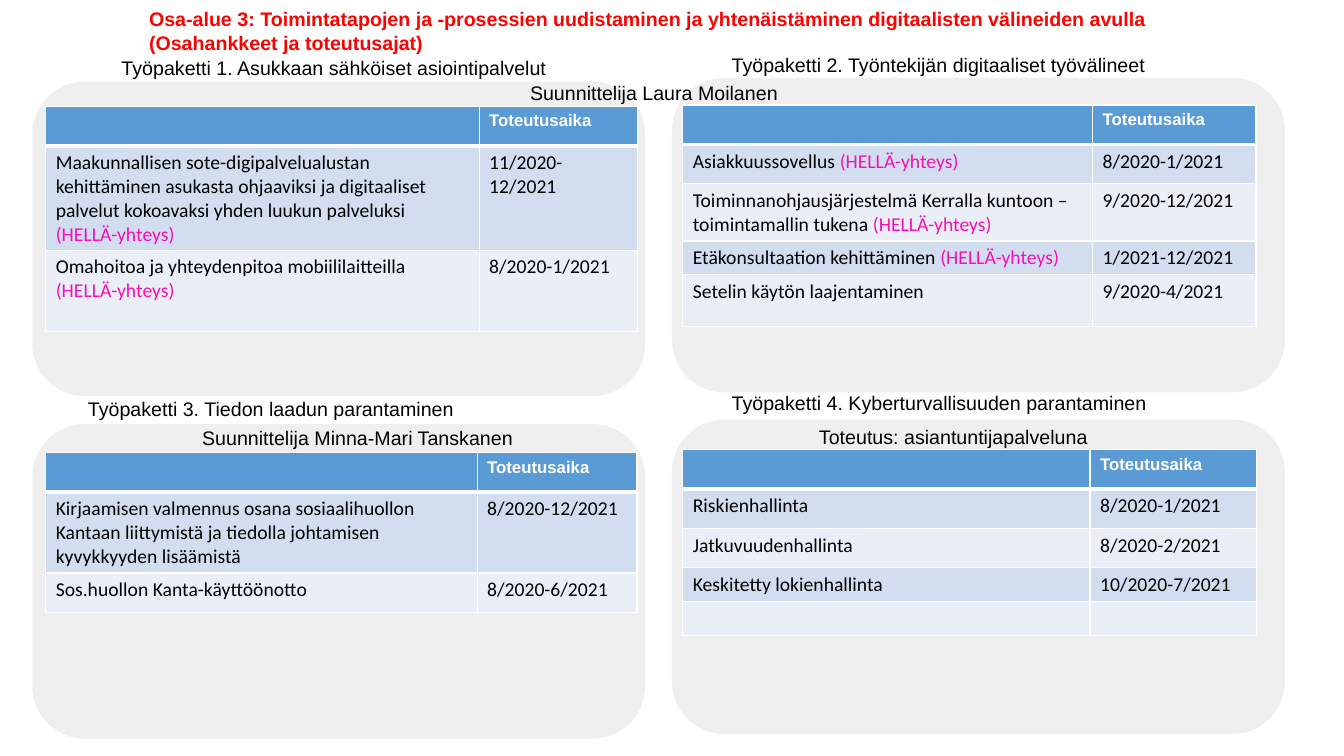
import pptx
import pptx.dml.color
import pptx.enum.shapes
import pptx.oxml
import pptx.oxml.ns
import pptx.util
from lxml import etree

LINK = "(HELLÄ-yhteys)"


def rgb(value):
    return pptx.dml.color.RGBColor.from_string(value)


class Board:
    """Style and current slide; all lengths are percentages of the slide's size."""
    heading_font, body_font = "Arial", "Calibri"
    black, white, red, pink = "000000", "FFFFFF", "FF0000", "F60EB9"
    panel_fill, header_fill = "EFEFEF", "5B9BD5"
    bands = ("D2DEEF", "EAEFF7")

    def __init__(self, prs):
        self.prs = prs
        self.s = prs.slides.add_slide(prs.slide_layouts[6])

    def x(self, share):
        return pptx.util.Emu(round(self.prs.slide_width * share / 100))

    def y(self, share):
        return pptx.util.Emu(round(self.prs.slide_height * share / 100))

    def box(self, left, top, width, height):
        return self.x(left), self.y(top), self.x(width), self.y(height)

    def run(self, p, text, font, color, size=14, bold=False):
        r = p.add_run()
        r.text = text
        r.font.name, r.font.size, r.font.bold = font, pptx.util.Pt(size), bold
        r.font.color.rgb = rgb(color)

    def panel(self, *place):
        kind = pptx.enum.shapes.MSO_SHAPE.ROUNDED_RECTANGLE
        sp = self.s.shapes.add_shape(kind, *self.box(*place))
        sp.adjustments[0] = 0.167
        sp.shadow.inherit = False
        sp.fill.solid()
        sp.fill.fore_color.rgb = rgb(self.panel_fill)
        sp.line.fill.background()

    def label(self, text, left, top, width, height=4.5, color=black, bold=False):
        sp = self.s.shapes.add_textbox(*self.box(left, top, width, height))
        tf = sp.text_frame
        tf.word_wrap = True
        self.run(tf.paragraphs[0], text, self.heading_font, color, bold=bold)

    def borders(self, cell, bottom):
        tcPr = cell._tc.get_or_add_tcPr()
        qn = pptx.oxml.ns.qn
        for side, points in (("L", 1), ("R", 1), ("T", 1), ("B", bottom)):
            ln = etree.SubElement(tcPr, qn(f"a:ln{side}"), w=str(pptx.util.Pt(points)))
            fill = etree.SubElement(ln, qn("a:solidFill"))
            etree.SubElement(fill, qn("a:srgbClr"), val=self.white)

    def cell(self, cell, text, fill, header):
        self.borders(cell, 3 if header else 1)
        cell.fill.solid()
        cell.fill.fore_color.rgb = rgb(fill)
        p = cell.text_frame.paragraphs[0]
        if not text:
            etree.SubElement(p._p, pptx.oxml.ns.qn("a:endParaRPr"), sz="1400")
        elif header:
            self.run(p, text, self.heading_font, self.white, 12, True)
        else:
            plain, link, _ = text.partition(LINK)
            self.run(p, plain, self.body_font, self.black)
            if link:
                self.run(p, link, self.body_font, self.pink)

    def table(self, left, top, widths, heights, tasks):
        rows = [("", "Toteutusaika"), *tasks]
        place = self.box(left, top, sum(widths), sum(heights))
        table = self.s.shapes.add_table(len(rows), len(widths), *place).table
        for column, width in zip(table.columns, widths):
            column.width = self.x(width)
        for i, (row, height) in enumerate(zip(rows, heights)):
            table.rows[i].height = self.y(height)
            fill = self.bands[(i - 1) % 2] if i else self.header_fill
            for j, text in enumerate(row):
                self.cell(table.cell(i, j), text, fill, header=i == 0)


# Work packages: panel corner, then title and table
PACKAGES = [
    dict(
        panel=(2.4, 10.8),
        title=("Työpaketti 1. Asukkaan sähköiset asiointipalvelut", 8.3, 6.8, 35.7),
        table=(3.4, 14.1, (32.25, 11.8), (5.2, 13.7, 10.8), [
            ("Maakunnallisen sote-digipalvelualustan kehittäminen asukasta ohjaaviksi "
             "ja digitaaliset palvelut kokoavaksi yhden luukun palveluksi " + LINK,
             "11/2020-12/2021"),
            ("Omahoitoa ja yhteydenpitoa mobiililaitteilla " + LINK, "8/2020-1/2021"),
        ])),
    dict(
        panel=(50, 10.3),
        title=("Työpaketti 2. Työntekijän digitaaliset työvälineet", 53.7, 6.4, 39.8),
        table=(50.8, 13.9, (30.5, 12.15), (5.2, 5.2, 7.6, 4.4, 6.8), [
            ("Asiakkuussovellus " + LINK, "8/2020-1/2021"),
            ("Toiminnanohjausjärjestelmä Kerralla kuntoon – toimintamallin tukena " + LINK,
             "9/2020-12/2021"),
            ("Etäkonsultaation kehittäminen " + LINK, "1/2021-12/2021"),
            ("Setelin käytön laajentaminen", "9/2020-4/2021"),
        ])),
    dict(
        panel=(2.4, 56.1),
        title=("Työpaketti 3. Tiedon laadun parantaminen", 5.8, 51.9, 35.7),
        table=(3.4, 59.9, (32.1, 11.9), (5.2, 10.7, 5.2), [
            ("Kirjaamisen valmennus osana sosiaalihuollon Kantaan liittymistä "
             "ja tiedolla johtamisen kyvykkyyden lisäämistä", "8/2020-12/2021"),
            ("Sos.huollon Kanta-käyttöönotto", "8/2020-6/2021"),
        ])),
    dict(
        panel=(50, 55.5),
        title=("Työpaketti 4. Kyberturvallisuuden parantaminen", 53.7, 51.1, 35.7),
        table=(50.8, 59.5, (30.3, 12.4), (5.2, 5.2, 5.2, 4.5, 4.5), [
            ("Riskienhallinta", "8/2020-1/2021"),
            ("Jatkuvuudenhallinta", "8/2020-2/2021"),
            ("Keskitetty lokienhallinta", "10/2020-7/2021"),
            ("", ""),
        ])),
]

# People in charge
OWNERS = [
    ("Suunnittelija Laura Moilanen", 38.7, 10),
    ("Suunnittelija Minna-Mari Tanskanen", 14.3, 55.7),
    ("Toteutus: asiantuntijapalveluna", 60.2, 55.5),
]


def main():
    prs = pptx.Presentation()
    prs.slide_width, prs.slide_height = pptx.util.Inches(13.33), pptx.util.Inches(7.5)
    board = Board(prs)

    # Panels and their titles
    for package in PACKAGES:
        board.panel(*package["panel"], 45.6, 41.6)
        board.label(*package["title"])

    # Slide heading
    board.label("Osa-alue 3: Toimintatapojen ja -prosessien uudistaminen ja "
                "yhtenäistäminen digitaalisten välineiden avulla "
                "(Osahankkeet ja toteutusajat)",
                10.35, 0.3, 77.1, 7.6, board.red, bold=True)

    # Schedules, then the people in charge on top
    for package in PACKAGES:
        board.table(*package["table"])
    for text, left, top in OWNERS:
        board.label(text, left, top, 28)

    prs.save("out.pptx")


if __name__ == "__main__":
    main()
